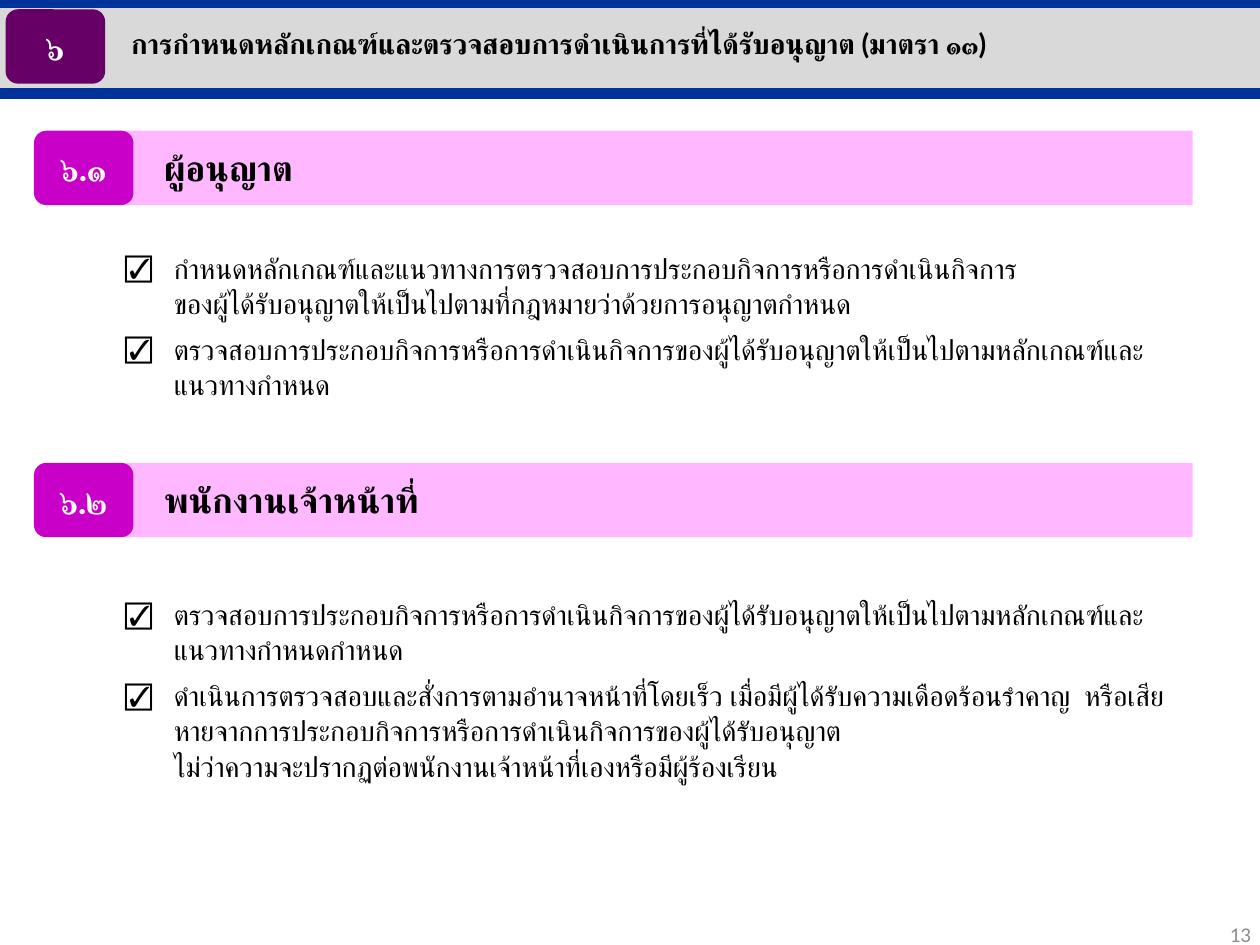
from copy import deepcopy

from lxml import etree
from pptx import Presentation
from pptx.dml.color import RGBColor
from pptx.enum.shapes import MSO_CONNECTOR, MSO_SHAPE
from pptx.enum.text import MSO_ANCHOR, MSO_AUTO_SIZE, PP_ALIGN
from pptx.oxml.ns import qn
from pptx.util import Pt

BLACK = RGBColor(0x00, 0x00, 0x00)
WHITE = RGBColor(0xFF, 0xFF, 0xFF)
NUMBER_GREY = RGBColor(0x8C, 0x8C, 0x8C)
BAND_GREY = RGBColor(0xD9, 0xD9, 0xD9)
RULE_BLUE = RGBColor(0x00, 0x33, 0x99)
PINK = RGBColor(0xFF, 0xB7, 0xFF)
MAGENTA = RGBColor(0xC8, 0x00, 0xC8)
PURPLE = RGBColor(0x66, 0x00, 0x66)

SLIDE_WIDTH, SLIDE_HEIGHT = 720, 540
BADGE_WIDTH, BADGE_HEIGHT = 56.9, 42.5
LIST_INDENT = 28.1

TITLE = "การกำหนดหลักเกณฑ์และตรวจสอบการดำเนินการที่ได้รับอนุญาต (มาตรา ๑๓)"

# Number, heading, top of the heading bar, box of the list, list items
SECTIONS = [
    ("๖.๑", "ผู้อนุญาต", 74.7, (64, 139, 616.5, 95), [
        "กำหนดหลักเกณฑ์และแนวทางการตรวจสอบการประกอบกิจการหรือการดำเนินกิจการ\n"
        "ของผู้ได้รับอนุญาตให้เป็นไปตามที่กฎหมายว่าด้วยการอนุญาตกำหนด",
        "ตรวจสอบการประกอบกิจการหรือการดำเนินกิจการของผู้ได้รับอนุญาต"
        "ให้เป็นไปตามหลักเกณฑ์และแนวทางกำหนด",
    ]),
    ("๖.๒", "พนักงานเจ้าหน้าที่", 264.5, (64, 337, 624.5, 142), [
        "ตรวจสอบการประกอบกิจการหรือการดำเนินกิจการของผู้ได้รับอนุญาต"
        "ให้เป็นไปตามหลักเกณฑ์และแนวทางกำหนดกำหนด",
        "ดำเนินการตรวจสอบและสั่งการตามอำนาจหน้าที่โดยเร็ว "
        "เมื่อมีผู้ได้รับความเดือดร้อนรำคาญ  หรือเสียหายจากการประกอบกิจการ"
        "หรือการดำเนินกิจการของผู้ได้รับอนุญาต \n"
        "ไม่ว่าความจะปรากฏต่อพนักงานเจ้าหน้าที่เองหรือมีผู้ร้องเรียน",
    ]),
]


def place(shape, left, top, width, height):
    shape.left, shape.top = Pt(left), Pt(top)
    shape.width, shape.height = Pt(width), Pt(height)


def write(paragraph, text, size=16, color=BLACK, bold=False, font="Lato",
          align=PP_ALIGN.LEFT):
    """Fill a paragraph; Thai needs the complex-script typeface as well."""
    paragraph.text = text
    paragraph.alignment = align
    for run in paragraph.runs:
        run.font.size = Pt(size)
        run.font.bold = bold
        run.font.name = font
        run.font.color.rgb = color
        run_format = run.font._element
        etree.SubElement(run_format, qn("a:cs"), typeface=font)
    # Line breaks take the same format, so that they keep the line height
    for line_break in paragraph._p.findall(qn("a:br")):
        line_break.insert(0, deepcopy(run_format))


def set_frame(shape, anchor=MSO_ANCHOR.TOP, wrap=True):
    frame = shape.text_frame
    frame.auto_size = MSO_AUTO_SIZE.NONE
    frame.word_wrap = wrap
    frame.vertical_anchor = anchor
    return frame


def add_block(shapes, kind, box, fill):
    block = shapes.add_shape(kind, *map(Pt, box))
    block.shadow.inherit = False
    block.fill.solid()
    block.fill.fore_color.rgb = fill
    block.line.fill.background()
    return block


def add_badge(shapes, left, top, number, fill):
    badge = add_block(shapes, MSO_SHAPE.ROUNDED_RECTANGLE,
                      (left, top, BADGE_WIDTH, BADGE_HEIGHT), fill)
    frame = set_frame(badge, MSO_ANCHOR.MIDDLE)
    write(frame.paragraphs[0], number, size=20, color=WHITE, bold=True,
          align=PP_ALIGN.CENTER)


def add_label(shapes, box, text, anchor=MSO_ANCHOR.TOP, **text_format):
    label = shapes.add_textbox(*map(Pt, box))
    write(set_frame(label, anchor).paragraphs[0], text, **text_format)


def add_rule(shapes, y):
    rule = shapes.add_connector(MSO_CONNECTOR.STRAIGHT,
                                0, Pt(y), Pt(SLIDE_WIDTH), Pt(y))
    rule.line.color.rgb = RULE_BLUE
    rule.line.width = Pt(6)
    etree.SubElement(rule._element.spPr, qn("a:effectLst"))


def add_heading(slide, number, heading, top):
    group = slide.shapes.add_group_shape().shapes
    add_block(group, MSO_SHAPE.RECTANGLE, (71, top, 610.5, BADGE_HEIGHT), PINK)
    add_label(group, (86.6, top + 5.5, 471, 31.5), heading, size=20, bold=True)
    add_badge(group, 19.4, top, number, MAGENTA)


def fill_checklist(placeholder, box, items):
    place(placeholder, *box)
    frame = set_frame(placeholder)
    for index, item in enumerate(items):
        paragraph = frame.add_paragraph() if index else frame.paragraphs[0]
        paragraph.level = 1
        paragraph.line_spacing = 1.05
        paragraph.space_before = Pt(6 if index else 0)
        properties = paragraph._p.get_or_add_pPr()
        properties.set("marL", str(Pt(LIST_INDENT)))
        properties.set("indent", str(-Pt(LIST_INDENT)))
        etree.SubElement(properties, qn("a:buChar"), char="☑")
        write(paragraph, item)


def bring_to_front(shape):
    shape._element.getparent().append(shape._element)


def main():
    prs = Presentation()
    prs.slide_width, prs.slide_height = Pt(SLIDE_WIDTH), Pt(SLIDE_HEIGHT)
    slide = prs.slides.add_slide(prs.slide_layouts.get_by_name("Two Content"))
    title, *checklists = slide.placeholders

    # Title band with its rules and the chapter number
    add_block(slide.shapes, MSO_SHAPE.RECTANGLE,
              (0, 3.6, SLIDE_WIDTH, 49), BAND_GREY)
    for y in (53.5, 1.6):
        add_rule(slide.shapes, y)
    add_badge(slide.shapes, 3.2, 5.3, "๖", PURPLE)
    place(title, 67.7, 11.5, 579, 26.7)
    write(set_frame(title, wrap=False).paragraphs[0], TITLE, bold=True)
    bring_to_front(title)

    # Sections: heading bar and checklist
    for checklist, section in zip(checklists, SECTIONS):
        number, heading, top, list_box, items = section
        add_heading(slide, number, heading, top)
        fill_checklist(checklist, list_box, items)
        bring_to_front(checklist)

    # Slide number
    add_label(slide.shapes, (560, 519.3, 162, 28.8), "13", MSO_ANCHOR.MIDDLE,
              size=12, color=NUMBER_GREY, font="Calibri", align=PP_ALIGN.RIGHT)

    prs.save("out.pptx")


if __name__ == "__main__":
    main()
